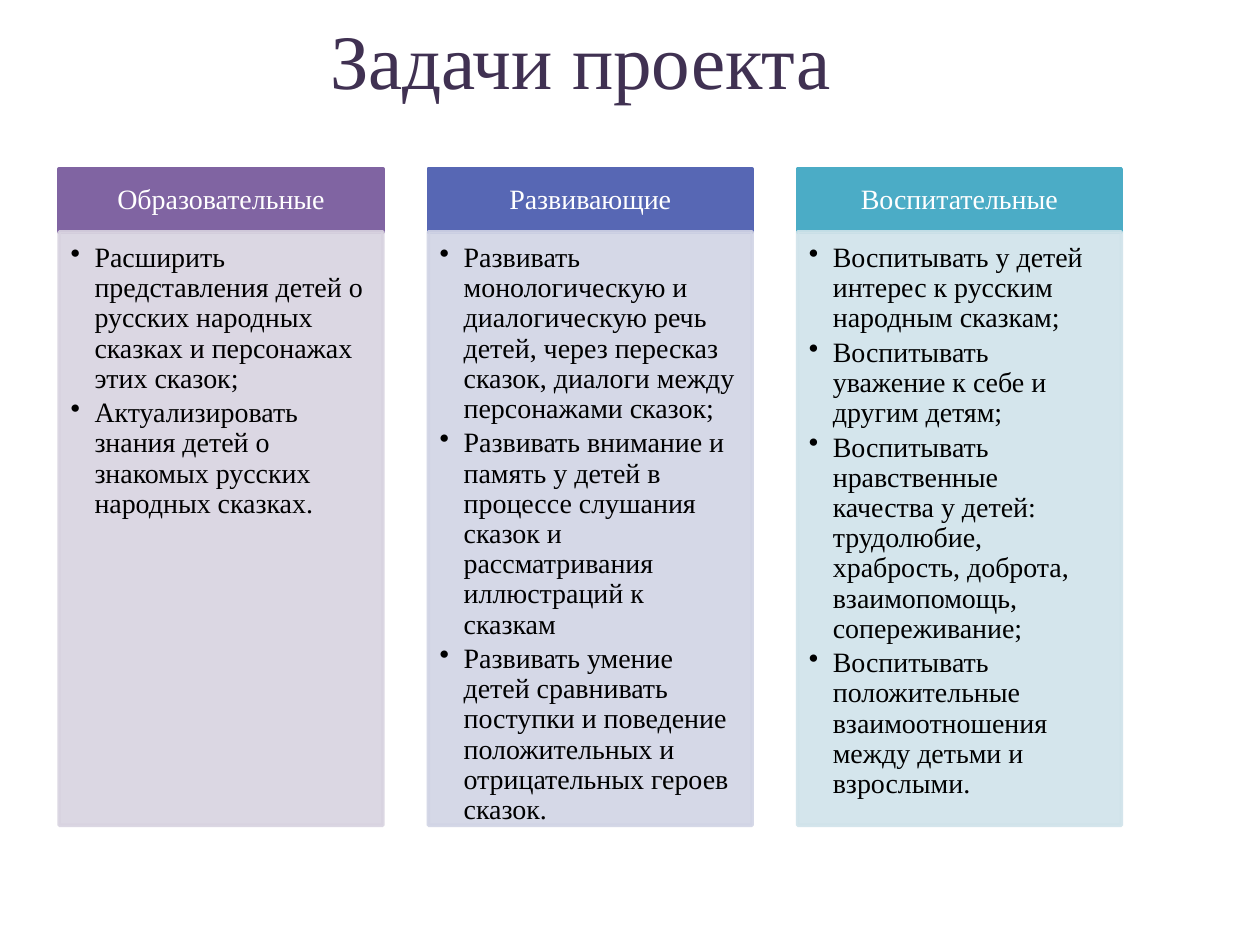
from pptx import Presentation, util as u
from pptx.dml.color import RGBColor
from pptx.enum import shapes, text
from pptx.oxml.ns import qn
from lxml import etree

COLORS = {"title": "403152", "white": "FFFFFF", "black": "000000"}
FONT = "Times New Roman"
LEFT, STEP, WIDTH = 0.47, 2.93, 2.57
HEAD_TOP, HEAD_H, BODY_H = 1.34, 0.5, 4.71
INDENT = u.Inches(0.19)

columns = [
    ("Образовательные", "8064A2", "D8D3E0", [
        "Расширить представления детей о русских народных сказках и персонажах этих сказок;",
        "Актуализировать знания детей о знакомых русских народных сказках.",
    ]),
    ("Развивающие", "5767B4", "D1D4E5", [
        "Развивать монологическую и диалогическую речь детей, через пересказ сказок, "
        "диалоги между персонажами сказок;",
        "Развивать внимание и память у детей в процессе слушания сказок и "
        "рассматривания иллюстраций к сказкам",
        "Развивать умение детей сравнивать поступки и поведение положительных и "
        "отрицательных героев сказок.",
    ]),
    ("Воспитательные", "4BACC6", "D0E3EA", [
        "Воспитывать у детей интерес к русским народным сказкам;",
        "Воспитывать уважение к себе и другим детям;",
        "Воспитывать нравственные качества у детей: трудолюбие, храбрость, доброта, "
        "взаимопомощь, сопереживание;",
        "Воспитывать положительные взаимоотношения между детьми и взрослыми.",
    ]),
]


def write(sp, lines, size=16, color="black", align=text.PP_ALIGN.CENTER,
          anchor=text.MSO_ANCHOR.MIDDLE, insets=(0.12, 0.07, 0.12, 0.07),
          spacing=0.9, after=0, bullets=False):
    """Fill a shape with one paragraph per line; insets are left, top, right, bottom."""
    tf = sp.text_frame
    tf.word_wrap = True
    tf.vertical_anchor = anchor
    tf.margin_left, tf.margin_top, tf.margin_right, tf.margin_bottom = map(u.Inches, insets)
    for i, line in enumerate(lines):
        p = tf.paragraphs[0] if i == 0 else tf.add_paragraph()
        p.alignment = align
        p.line_spacing = spacing
        p.space_after = u.Pt(after)
        if bullets:
            pPr = p._p.get_or_add_pPr()
            pPr.set("marL", str(INDENT))
            pPr.set("indent", str(-INDENT))
            etree.SubElement(pPr, qn("a:buChar")).set("char", "•")
        r = p.add_run()
        r.text = line
        r.font.name = FONT
        r.font.size = u.Pt(size)
        r.font.color.rgb = RGBColor.from_string(COLORS[color])


def add_panel(left, top, height, color, opacity=100):
    """Add a rectangle whose fill and outline share one colour."""
    sp = s.shapes.add_shape(shapes.MSO_SHAPE.RECTANGLE, u.Inches(left), u.Inches(top),
                            u.Inches(WIDTH), u.Inches(height))
    sp.shadow.inherit = False
    sp.fill.solid()
    sp.fill.fore_color.rgb = RGBColor.from_string(color)
    sp.line.color.rgb = RGBColor.from_string(color)
    sp.line.width = u.Pt(2)
    if opacity < 100:
        for clr in sp._element.spPr.iter(qn("a:srgbClr")):
            etree.SubElement(clr, qn("a:alpha")).set("val", str(opacity * 1000))
    return sp


prs = Presentation()
prs.slide_width, prs.slide_height = u.Inches(10), u.Inches(7.5)
s = prs.slides.add_slide(prs.slide_layouts[6])

title = s.shapes.add_textbox(u.Inches(0.31), 0, u.Inches(8.75), u.Inches(0.94))
write(title, ["Задачи проекта "], size=44, color="title",
      insets=(0.1, 0.05, 0.1, 0.05), spacing=1.0)

for i, (heading, dark, light, tasks) in enumerate(columns):
    left = LEFT + i * STEP
    head = add_panel(left, HEAD_TOP, HEAD_H, dark)
    write(head, [heading], color="white")
    body = add_panel(left, HEAD_TOP + HEAD_H, BODY_H, light, opacity=90)
    write(body, tasks, align=text.PP_ALIGN.LEFT, anchor=text.MSO_ANCHOR.TOP,
          insets=(0.09, 0.09, 0.12, 0.14), after=2.4, bullets=True)

prs.save("out.pptx")
